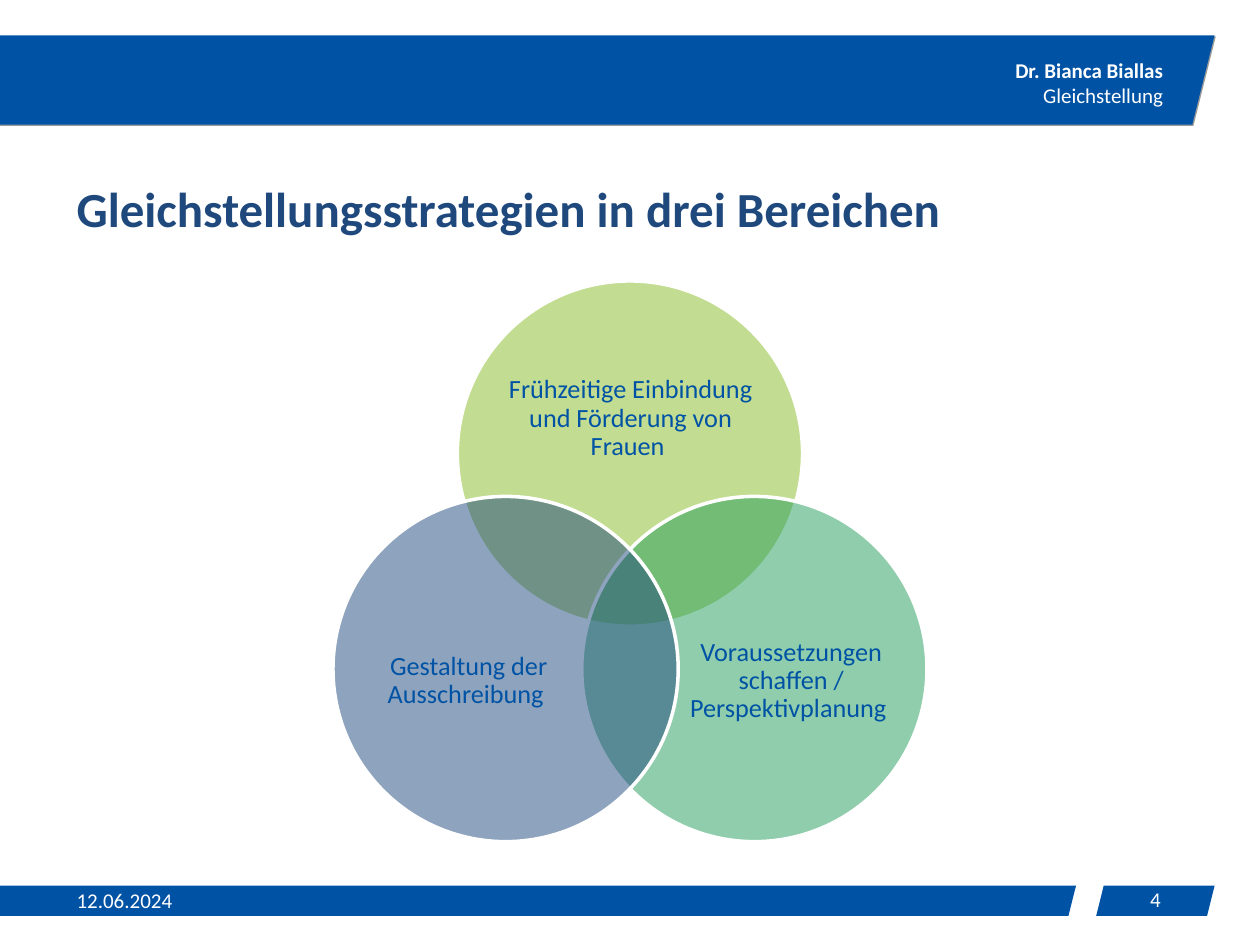
import math
from dataclasses import dataclass

import lxml.etree
import pptx
import pptx.dml.color
import pptx.enum.shapes
import pptx.enum.text
import pptx.oxml.ns
import pptx.util

Inches = pptx.util.Inches
Pt = pptx.util.Pt
SHAPES = pptx.enum.shapes.MSO_SHAPE
ALIGN = pptx.enum.text.PP_ALIGN
ANCHOR = pptx.enum.text.MSO_ANCHOR


@dataclass(frozen=True)
class Theme:
    font: str = "Calibri"
    blue: str = "0053A4"
    navy: str = "1F497D"
    lime: str = "86BC25"
    green: str = "239C5A"
    white: str = "FFFFFF"
    title_size: int = 28
    label_size: int = 15
    small_size: int = 12


THEME = Theme()

# Content
TITLE = "Gleichstellungsstrategien in drei Bereichen"
HEADER = ["Dr. Bianca Biallas", "Gleichstellung"]
DATE = "12.06.2024"
PAGE_NUMBER = "4"

# Venn circles: label, colour, angle from the centre, label box
CIRCLES = [
    ("Frühzeitige Einbindung und Förderung von Frauen ", THEME.lime, -90, (4, 2.71, 2.01, 1.23)),
    ("Voraussetzungen schaffen / Perspektivplanung ", THEME.green, 30, (5.46, 4.65, 1.64, 1.51)),
    ("Gestaltung der Ausschreibung ", THEME.navy, 150, (2.9, 4.65, 1.64, 1.51)),
]
VENN_CENTER = (5, 4.74)
VENN_RADIUS = 1.14
DIAMETER = 2.74

# Blue bands: left, top, width, height
FOOTER_BANDS = [(-0.2, 7.03, 8.74, 0.24), (8.7, 7.03, 0.94, 0.24)]
HEADER_BAND = (-0.2, 0.28, 9.84, 0.71)


def rgb(color):
    return pptx.dml.color.RGBColor.from_string(color)


def add_filled(slide, kind, box, color):
    shape = slide.shapes.add_shape(kind, *map(Inches, box))
    shape.shadow.inherit = False
    shape.fill.solid()
    shape.fill.fore_color.rgb = rgb(color)
    shape.line.fill.background()
    return shape


def add_xml_child(parent, tag, **attributes):
    child = lxml.etree.SubElement(parent, pptx.oxml.ns.qn(tag))
    for name, value in attributes.items():
        child.set(name, str(value))
    return child


def add_drop_shadow(shape):
    effects = shape._element.spPr.find(pptx.oxml.ns.qn("a:effectLst"))
    shadow = add_xml_child(effects, "a:outerShdw", dist=Pt(1), dir=45 * 60000,
                           algn="tl", rotWithShape=0)
    color = add_xml_child(shadow, "a:srgbClr", val="000000")
    add_xml_child(color, "a:alpha", val=40000)


def set_half_transparent(shape):
    color = shape._element.spPr.find(
        pptx.oxml.ns.qn("a:solidFill") + "/" + pptx.oxml.ns.qn("a:srgbClr"))
    add_xml_child(color, "a:alpha", val=50000)


def add_text(slide, box, lines, size, color, align=ALIGN.LEFT, anchor=ANCHOR.MIDDLE,
             wrap=True, bold_first=False, inset=None, line_spacing=None):
    frame = slide.shapes.add_textbox(*map(Inches, box)).text_frame
    frame.word_wrap = wrap
    frame.vertical_anchor = anchor
    if inset is not None:
        frame.margin_left = frame.margin_right = Inches(inset)
        frame.margin_top = frame.margin_bottom = Inches(inset)
    frame.text = "\n".join(lines)
    for index, paragraph in enumerate(frame.paragraphs):
        paragraph.alignment = align
        paragraph.line_spacing = line_spacing
        for run in paragraph.runs:
            run.font.name = THEME.font
            run.font.size = Pt(size)
            run.font.color.rgb = rgb(color)
            run.font.bold = bold_first and index == 0


def add_venn(slide):
    for label, color, angle, label_box in CIRCLES:
        radians = math.radians(angle)
        left = VENN_CENTER[0] + VENN_RADIUS * math.cos(radians) - DIAMETER / 2
        top = VENN_CENTER[1] + VENN_RADIUS * math.sin(radians) - DIAMETER / 2
        circle = add_filled(slide, SHAPES.OVAL, (left, top, DIAMETER, DIAMETER), color)
        set_half_transparent(circle)
        circle.line.color.rgb = rgb(THEME.white)
        circle.line.width = Pt(2)
        add_text(slide, label_box, [label], THEME.label_size, THEME.blue,
                 align=ALIGN.CENTER, inset=0, line_spacing=0.9)


def main():
    presentation = pptx.Presentation()
    presentation.slide_width = Inches(10)
    presentation.slide_height = Inches(7.5)
    slide = presentation.slides.add_slide(presentation.slide_layouts[6])

    # Header and footer bands
    for band in FOOTER_BANDS:
        add_filled(slide, SHAPES.PARALLELOGRAM, band, THEME.blue)
    add_drop_shadow(add_filled(slide, SHAPES.PARALLELOGRAM, HEADER_BAND, THEME.blue))

    # Header, title, date and page number
    add_text(slide, (7.94, 0.41, 1.39, 0.5), HEADER, THEME.small_size, THEME.white,
             align=ALIGN.RIGHT, anchor=ANCHOR.TOP, wrap=False, bold_first=True)
    add_text(slide, (0.51, 1.31, 8.98, 0.62), [TITLE], THEME.title_size, THEME.navy,
             anchor=ANCHOR.BOTTOM, bold_first=True)
    add_text(slide, (0.51, 6.98, 1.1, 0.32), [DATE], THEME.small_size, THEME.white)
    add_text(slide, (8.7, 6.98, 0.94, 0.31), [PAGE_NUMBER], THEME.small_size, THEME.white,
             align=ALIGN.CENTER)

    # Three overlapping areas
    add_venn(slide)

    presentation.save("out.pptx")


if __name__ == "__main__":
    main()
